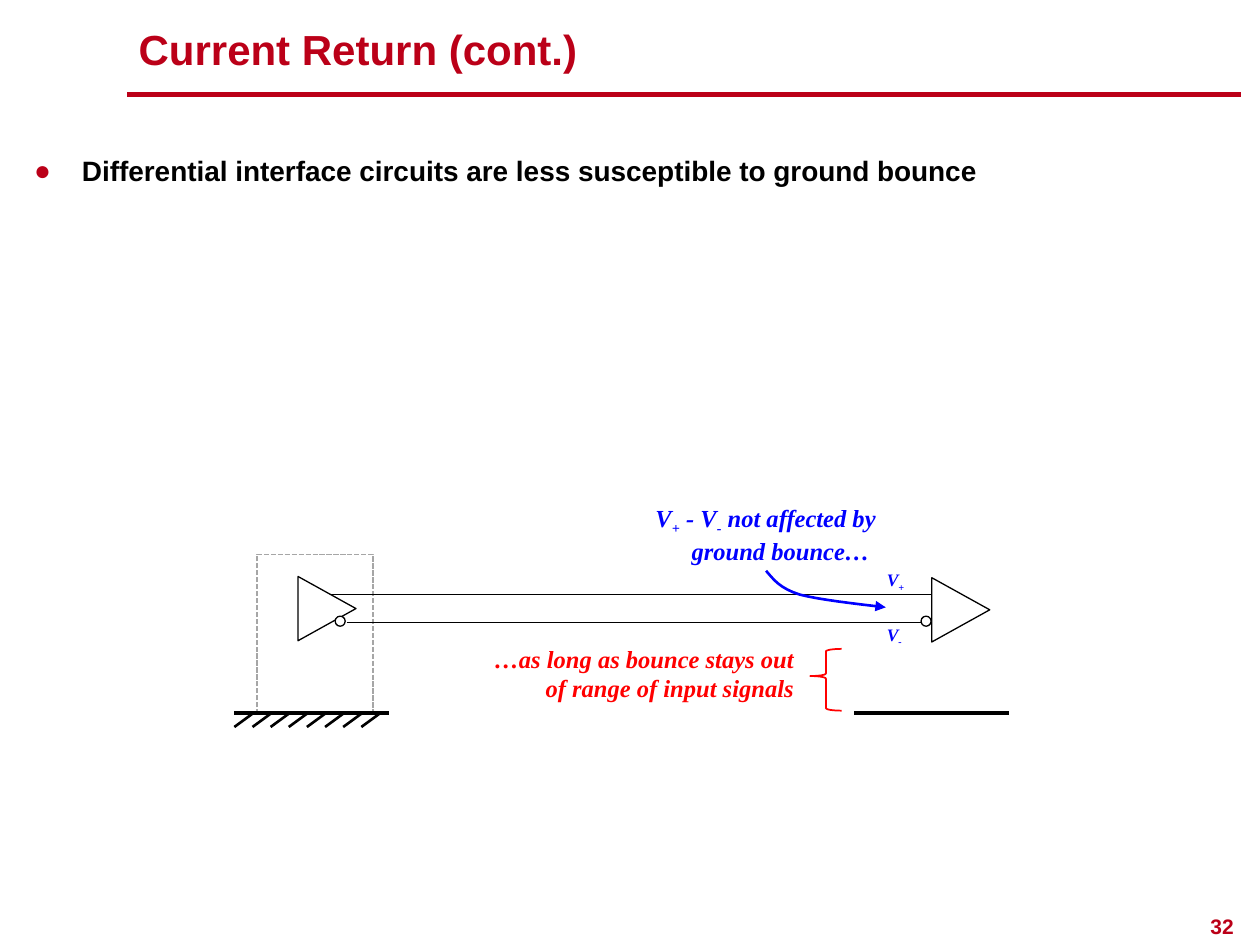
"""Build a slide on current return in differential interface circuits."""
from lxml import etree
from pptx import Presentation
from pptx.dml.color import RGBColor
from pptx.enum import dml, shapes, text
from pptx.oxml.ns import qn
from pptx.util import Inches, Pt

INK = {k: RGBColor.from_string(v) for k, v in {
    "brand": "BB0018", "black": "000000", "white": "FFFFFF",
    "gray": "A6A6A6", "blue": "0000FF", "red": "FF0000"}.items()}
KIND = shapes.MSO_SHAPE


def line(home, ends, ink, width):
    """Add a plain straight line to a shape collection."""
    wire = home.add_connector(shapes.MSO_CONNECTOR.STRAIGHT, *map(Inches, ends))
    wire.line.color.rgb = INK[ink]
    wire.line.width = Pt(width)
    etree.SubElement(wire._element.spPr, qn("a:effectLst"))


def style(para, face, size, ink, italic=False):
    """Set the bold font of a paragraph."""
    font = para.font
    font.name, font.size, font.bold, font.italic = face, Pt(size), True, italic
    font.color.rgb = INK[ink]


deck = Presentation()
deck.slide_width, deck.slide_height = Inches(10), Inches(7.5)
slide = deck.slides.add_slide(deck.slide_layouts[1])
tree = slide.shapes

title, body = tree.title, slide.placeholders[1]
for holder, box, words, size, ink in (
        (title, (1, 0.17, 7.93, 0.44), "Current Return (cont.)", 24, "brand"),
        (body, (0.17, 1.17, 9.62, 2.69),
         "Differential interface circuits are less susceptible to ground bounce",
         16, "black")):
    holder.left, holder.top, holder.width, holder.height = map(Inches, box)
    frame = holder.text_frame
    frame.text = words
    frame.auto_size = text.MSO_AUTO_SIZE.NONE
    para = frame.paragraphs[0]
    para.alignment = text.PP_ALIGN.LEFT
    para.space_before = Pt(0)
    if holder is body:
        props = para._p.get_or_add_pPr()
        props.set("marL", str(Inches(0.38)))
        props.set("indent", str(-Inches(0.38)))
        tint = etree.SubElement(props, qn("a:buClr"))
        etree.SubElement(tint, qn("a:srgbClr"), val=str(INK["brand"]))
        etree.SubElement(props, qn("a:buFont"), typeface="Arial")
        etree.SubElement(props, qn("a:buChar"), char="●")
    style(para, "Arial", size, ink)
title.text_frame.vertical_anchor = text.MSO_ANCHOR.MIDDLE
line(tree, (1.01, 0.75, 9.85, 0.75), "brand", 3)

case = tree.add_shape(KIND.RECTANGLE, *map(Inches, (2.04, 4.4, 0.92, 1.25)))
case.shadow.inherit = False
case.fill.solid()
case.fill.fore_color.rgb = INK["white"]
case.line.color.rgb = INK["gray"]
case.line.width = Pt(1)
case.line.dash_style = dml.MSO_LINE.SQUARE_DOT

ground = tree.add_group_shape().shapes
line(ground, (1.86, 5.66, 3.09, 5.66), "black", 2.25)
for i in range(8):
    foot = 1.86 + 0.144 * i
    line(ground, (foot + 0.15, 5.66, foot, 5.77), "black", 1.5)
line(tree, (6.78, 5.66, 8.01, 5.66), "black", 2.25)
line(tree, (2.42, 4.72, 7.46, 4.72), "black", 0.75)
line(tree, (2.75, 4.94, 7.5, 4.94), "black", 0.75)

for left, top, dot in ((2.34, 4.6, 2.66), (7.37, 4.61, 7.31)):
    gate = tree.add_group_shape().shapes
    for kind, box, turn in (
            (KIND.ISOSCELES_TRIANGLE, (left, top, 0.51, 0.46), 90),
            (KIND.OVAL, (dot, 4.89, 0.08, 0.08), 0)):
        part = gate.add_shape(kind, *map(Inches, box))
        part.rotation = turn
        part.shadow.inherit = False
        part.fill.solid()
        part.fill.fore_color.rgb = INK["white"]
        part.line.color.rgb = INK["black"]
        part.line.width = Pt(0.75)

right, start = text.PP_ALIGN.RIGHT, text.PP_ALIGN.LEFT
serif = "Times New Roman"
for box, runs, face, size, ink, side in (
        ((5.1, 3.94, 1.95, 0.57),
         ("V", "+", " - V", "-", " not affected by ground bounce… "),
         serif, 14, "blue", right),
        ((6.94, 4.47, 0.46, 0.27), ("V", "+"), serif, 10, "blue", start),
        ((6.94, 4.9, 0.46, 0.27), ("V", "-"), serif, 10, "blue", start),
        ((3.81, 5.06, 2.59, 0.57),
         ("…as long as bounce stays out of range of input signals",),
         serif, 14, "red", right),
        ((9.48, 7.2, 0.41, 0.28), ("32",), "Arial", 12, "brand", right)):
    frame = tree.add_textbox(*map(Inches, box)).text_frame
    frame.word_wrap = True
    para = frame.paragraphs[0]
    para.alignment = side
    style(para, face, size, ink, face == serif)
    for words in runs:
        run = para.add_run()
        run.text = words
        if words in "+-":
            run._r.get_or_add_rPr().set("baseline", "-25000")

curves = (((6.08, 4.53), (6.14, 4.6), (6.19, 4.67), (6.35, 4.72)),
          ((6.35, 4.72), (6.51, 4.76), (6.77, 4.79), (7.03, 4.82)))
dots = []
for curve in curves:
    for t in (i / 8 for i in range(1, 9)):
        mix = ((1 - t) ** 3, 3 * t * (1 - t) ** 2, 3 * t * t * (1 - t), t ** 3)
        dots.append([Inches(sum(m * p[axis] for m, p in zip(mix, curve)))
                     for axis in (0, 1)])
pen = tree.build_freeform(*map(Inches, curves[0][0]))
pen.add_line_segments(dots, close=False)
arrow = pen.convert_to_shape()
brace = tree.add_shape(KIND.LEFT_BRACE, *map(Inches, (6.43, 5.15, 0.25, 0.49)))
brace.adjustments[0], brace.adjustments[1] = 0.08, 0.44
for mark, ink, width in ((arrow, "blue", 1.5), (brace, "red", 1)):
    mark.shadow.inherit = False
    mark.fill.background()
    mark.line.color.rgb = INK[ink]
    mark.line.width = Pt(width)
etree.SubElement(arrow.line._get_or_add_ln(), qn("a:tailEnd"), type="triangle")

deck.save("out.pptx")
